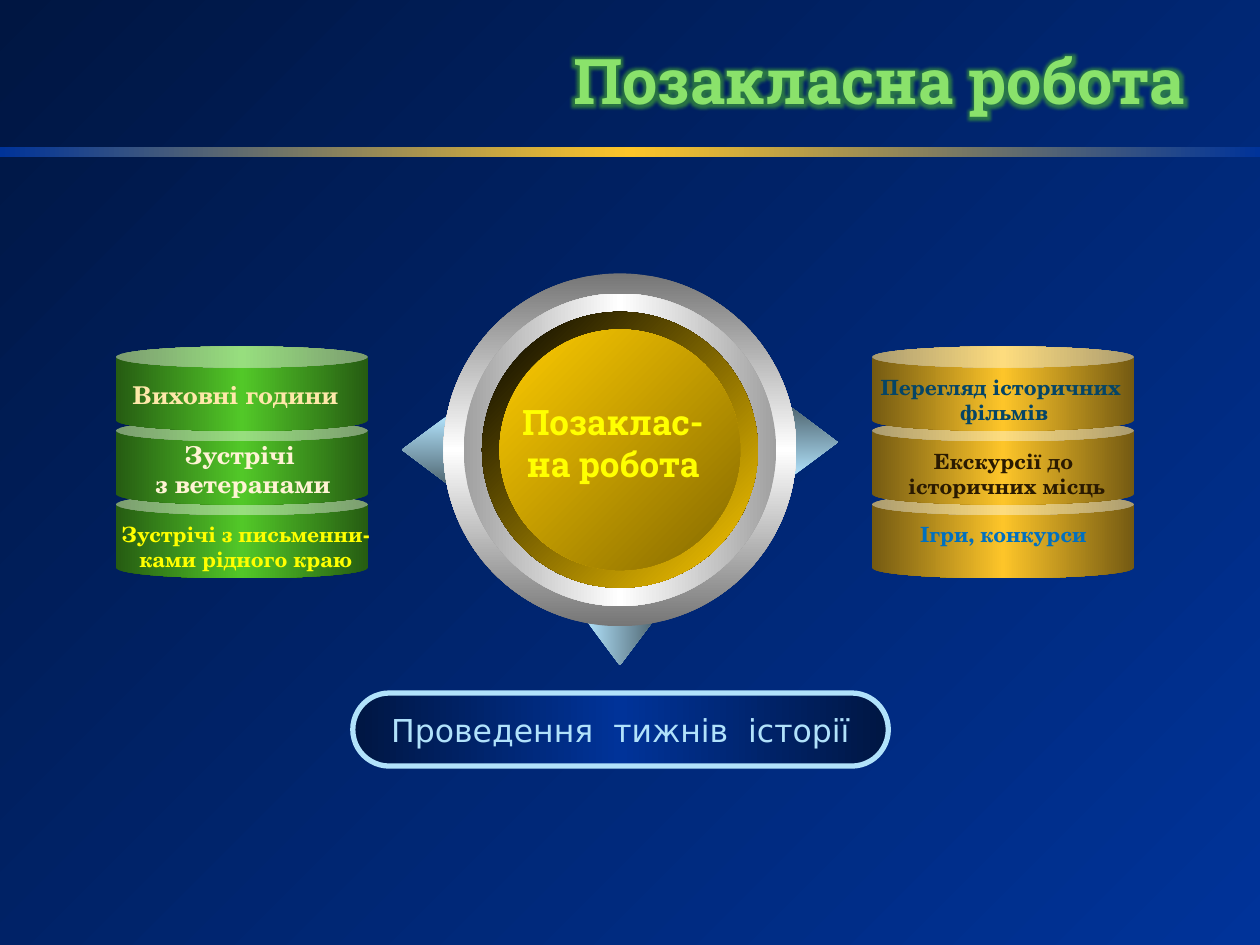
from copy import deepcopy

from lxml import etree
from pptx import Presentation
from pptx.dml.color import RGBColor
from pptx.enum.shapes import MSO_SHAPE
from pptx.enum.text import MSO_ANCHOR, PP_ALIGN
from pptx.oxml.ns import qn
from pptx.util import Inches, Pt

CAN, OVAL, ARROW = MSO_SHAPE.CAN, MSO_SHAPE.OVAL, MSO_SHAPE.UP_ARROW
RECTANGLE, PILL = MSO_SHAPE.RECTANGLE, MSO_SHAPE.ROUNDED_RECTANGLE
CENTER, RIGHT = PP_ALIGN.CENTER, PP_ALIGN.RIGHT
TOP, MIDDLE = MSO_ANCHOR.TOP, MSO_ANCHOR.MIDDLE

NAVY, BLUE = RGBColor(0x00, 0x16, 0x42), RGBColor(0x00, 0x33, 0x99)
GOLD, DARK_GOLD = RGBColor(0xFD, 0xC5, 0x29), RGBColor(0x74, 0x5A, 0x12)
GREEN, DARK_GREEN = RGBColor(0x52, 0xC8, 0x28), RGBColor(0x26, 0x5C, 0x12)
SKY, STEEL = RGBColor(0xB1, 0xE2, 0xFB), RGBColor(0x51, 0x68, 0x73)
WHITE, BLACK = RGBColor(0xFF, 0xFF, 0xFF), RGBColor(0x00, 0x00, 0x00)
GRAY, SILVER = RGBColor(0x76, 0x76, 0x76), RGBColor(0xA0, 0xA0, 0xA0)
AMBER, DARK_AMBER = RGBColor(0xFF, 0xCC, 0x00), RGBColor(0x84, 0x69, 0x00)
YELLOW, LIME = RGBColor(0xFF, 0xFF, 0x00), RGBColor(0x8A, 0xE2, 0x6B)
CREAM, IVORY = RGBColor(0xFE, 0xE8, 0xA9), RGBColor(0xFF, 0xF3, 0xD4)
TEAL, BROWN = RGBColor(0x05, 0x45, 0x66), RGBColor(0x2A, 0x1A, 0x01)
AZURE = RGBColor(0x00, 0x70, 0xC0)

SLAB, SERIF, SANS = "Roboto Slab", "TeX Gyre Schola", "DejaVu Sans"

TITLE = "Позакласна робота"
CORE = "Позаклас-на робота"
WEEKS = "Проведення  тижнів  історії"

CAN_TOP, CAN_STEP, CAN_HEIGHT = 2.75, 0.585, 0.67
STACKS = [
    (0.92, 2.0, DARK_GREEN, GREEN, [
        ("Виховні години", 14, CREAM, (0.94, 2.97, 1.86, 0.34)),
        ("Зустрічі \nз ветеранами", 14, IVORY, (1.13, 3.44, 1.6, 0.57)),
        ("Зустрічі з письменни-\nками рідного краю", 12, YELLOW, (0.86, 4.09, 2.18, 0.5)),
    ]),
    (6.92, 2.08, DARK_GOLD, GOLD, [
        ("Перегляд історичних\n фільмів", 12, TEAL, (6.88, 2.92, 2.13, 0.5)),
        ("Екскурсії до \nісторичних місць", 12, BROWN, (7.11, 3.51, 1.76, 0.5)),
        ("Ігри, конкурси", 12, AZURE, (7.19, 4.09, 1.55, 0.3)),
    ]),
]
POINTERS = [(3.1, 3.39, 270), (6.2, 3.33, 90), (4.65, 4.92, 180)]
HUB_X, HUB_Y = 4.92, 3.57
RINGS = [
    (2.8, [GRAY, WHITE, GRAY], 90),
    (2.48, [SILVER, WHITE, SILVER], 0),
    (2.19, [BLACK, AMBER], 45),
    (1.91, [AMBER, DARK_AMBER], 45),
]


def set_gradient(fill, colors, angle):
    fill.gradient()
    fill.gradient_angle = (360 - angle) % 360
    first = fill.gradient_stops[0]._gs
    for _ in colors[2:]:
        first.addnext(deepcopy(first))
    for index, (stop, color) in enumerate(zip(fill.gradient_stops, colors)):
        stop.position = index / (len(colors) - 1)
        stop.color.rgb = color


def add_gradient_shape(page, kind, frame, colors, angle=0):
    shape = page.shapes.add_shape(kind, *map(Inches, frame))
    shape.shadow.inherit = False
    shape.line.fill.background()
    set_gradient(shape.fill, colors, angle)
    return shape


def set_text(shape, text, size, font, color, bold=True, align=CENTER, anchor=TOP, wrap=False):
    text_frame = shape.text_frame
    text_frame.text = text
    text_frame.word_wrap = wrap
    text_frame.vertical_anchor = anchor
    for para in text_frame.paragraphs:
        para.alignment = align
        for span in para.runs:
            span.font.size = Pt(size)
            span.font.name = font
            span.font.bold = bold
            span.font.color.rgb = color


def add_label(page, frame, *text, **options):
    box = page.shapes.add_textbox(*map(Inches, frame))
    set_text(box, *text, **options)
    return box


def add_glow(span, color, radius, alpha):
    effects = etree.Element(qn("a:effectLst"))
    glow = etree.SubElement(effects, qn("a:glow"), rad=str(Pt(radius)))
    tint = etree.SubElement(glow, qn("a:srgbClr"), val=str(color))
    etree.SubElement(tint, qn("a:alpha"), val=str(alpha * 1000))
    span._r.rPr.find(qn("a:solidFill")).addnext(effects)


def main():
    deck = Presentation()
    deck.slide_width, deck.slide_height = Inches(10), Inches(7.5)
    page = deck.slides.add_slide(deck.slide_layouts[6])
    set_gradient(page.background.fill, [NAVY, BLUE], 45)
    add_gradient_shape(page, RECTANGLE, (0, 1.17, 10, 0.08), [BLUE, GOLD, BLUE])

    for left, width, edge, middle, labels in STACKS:
        for level in reversed(range(len(labels))):
            frame = (left, CAN_TOP + level * CAN_STEP, width, CAN_HEIGHT)
            add_gradient_shape(page, CAN, frame, [edge, middle, edge])

    for left, top, rotation in POINTERS:
        pointer = add_gradient_shape(page, ARROW, (left, top, 0.54, 0.36), [SKY, STEEL])
        pointer.adjustments[0] = 0.52
        pointer.adjustments[1] = 1
        pointer.rotation = rotation
        pointer._element.spPr.xfrm.set("flipH", "1")

    for size, colors, angle in RINGS:
        frame = (HUB_X - size / 2, HUB_Y - size / 2, size, size)
        add_gradient_shape(page, OVAL, frame, colors, angle)
    add_label(page, (3.98, 3.13, 1.77, 0.77), CORE, 20, SLAB, YELLOW, wrap=True)

    pill = add_gradient_shape(page, PILL, (2.8, 5.5, 4.25, 0.58), [NAVY, BLUE, NAVY])
    pill.adjustments[0] = 0.5
    pill.line.color.rgb = SKY
    pill.line.width = Pt(3)
    set_text(pill, WEEKS, 18, SANS, SKY, bold=False, anchor=MIDDLE)

    for *_, labels in STACKS:
        for text, size, color, frame in labels:
            add_label(page, frame, text, size, SERIF, color)

    title = add_label(page, (1.25, 0.32, 8.25, 0.62), TITLE, 36, SLAB, LIME,
                      align=RIGHT, anchor=MIDDLE, wrap=True)
    add_glow(title.text_frame.paragraphs[0].runs[0], GREEN, 8, 50)
    deck.save("out.pptx")


if __name__ == "__main__":
    main()
